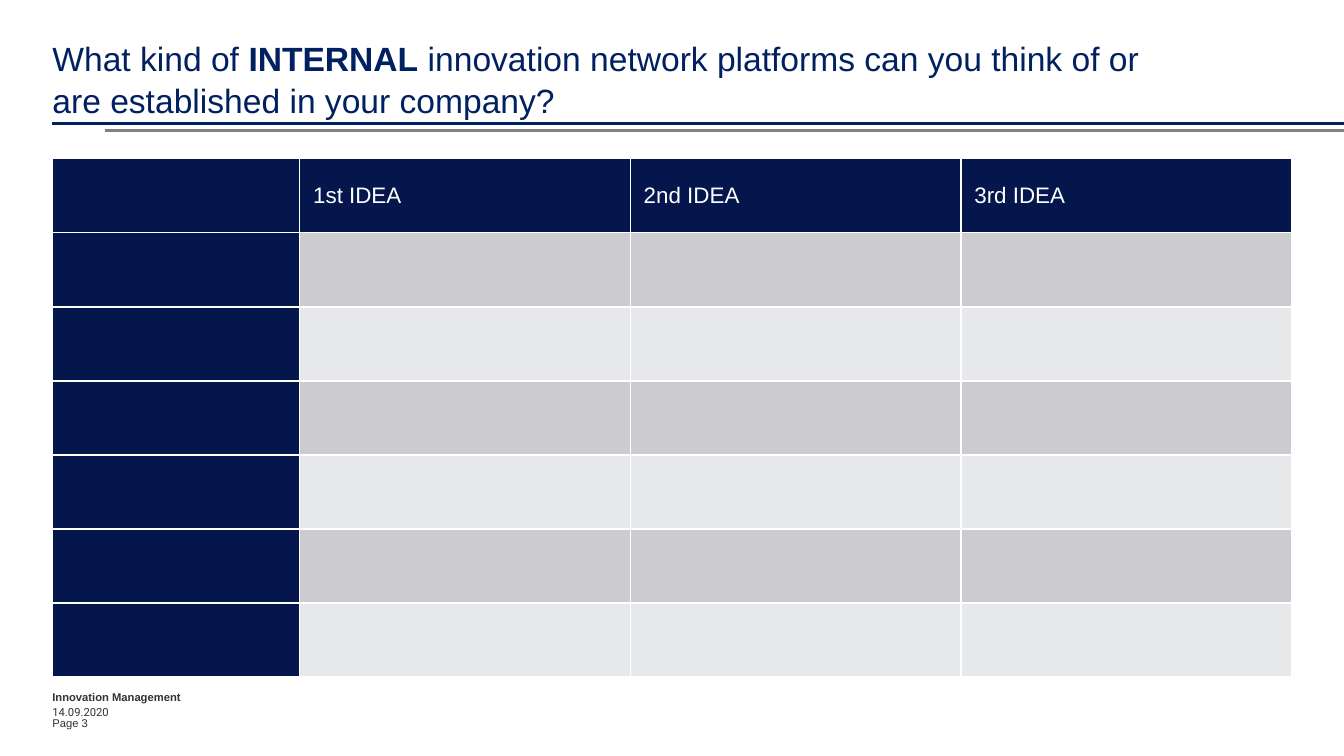
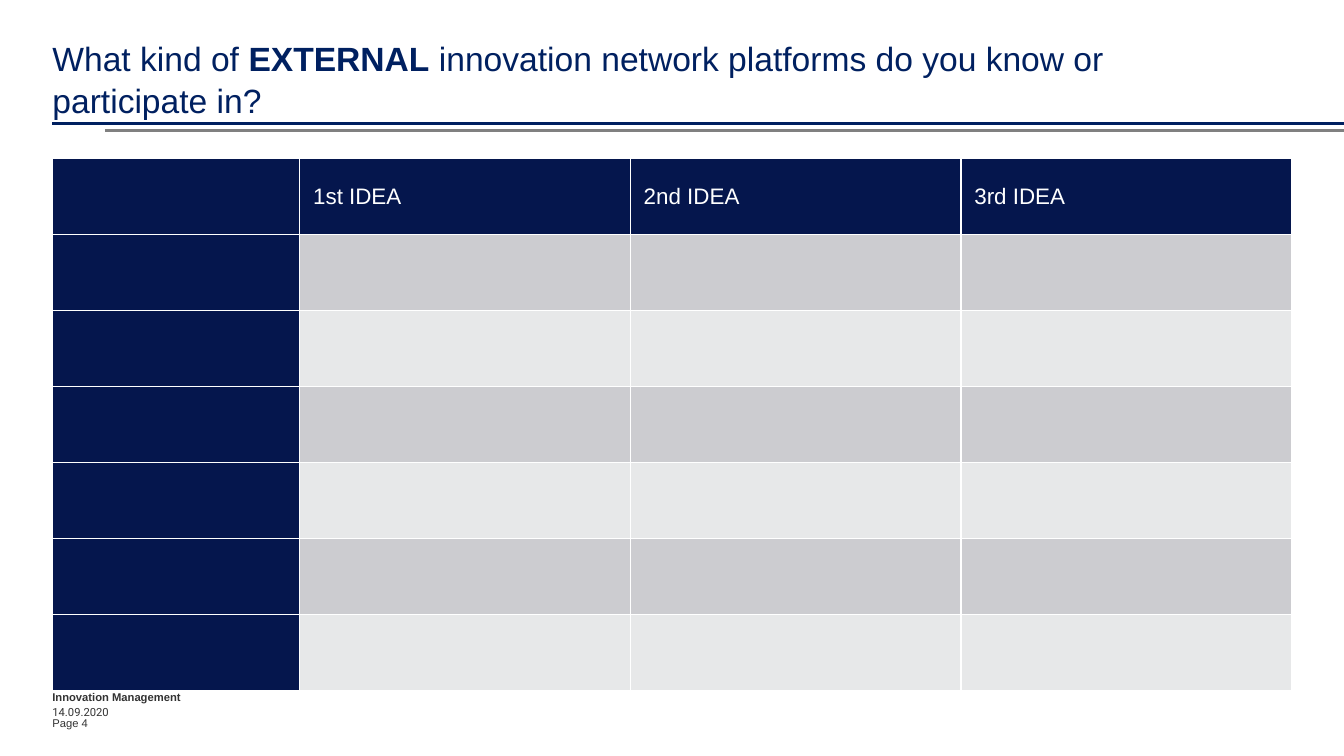
from dataclasses import dataclass

from lxml import etree
from pptx import Presentation
from pptx.dml.color import RGBColor
from pptx.enum.shapes import MSO_CONNECTOR
from pptx.enum.text import MSO_ANCHOR, MSO_AUTO_SIZE, PP_ALIGN
from pptx.oxml.ns import qn
from pptx.util import Inches, Pt

STRAIGHT = MSO_CONNECTOR.STRAIGHT
TOP, MIDDLE = MSO_ANCHOR.TOP, MSO_ANCHOR.MIDDLE
NO_FIT, GROW = MSO_AUTO_SIZE.NONE, MSO_AUTO_SIZE.SHAPE_TO_FIT_TEXT
LEFT = PP_ALIGN.LEFT

TITLE_BLUE, RULE_GREY, FOOTER_GREY = "002060", "808080", "333333"
NAVY, BAND_DARK, BAND_LIGHT, WHITE = "05164D", "CCCCD0", "E7E8E9", "FFFFFF"

SLIDE_W = 10
SLIDE_H = SLIDE_W * 9 / 16
MARGIN = 0.39
TABLE_TOP = 1.18
COLUMN_WIDTHS = (1.84, 2.46, 2.46, 2.46)
ROW_COUNT = 7
HEADINGS = ("", "1st IDEA", "2nd IDEA", "3rd IDEA")


@dataclass(frozen=True)
class Rule:
    left: float
    top: float
    color: str


@dataclass(frozen=True)
class FooterLine:
    top: float
    width: float
    text: str
    font: str = "Arial"
    bold: bool = False
    wrap: bool = False


@dataclass(frozen=True)
class IdeaSlide:
    page: int
    title: tuple[str, str, str]  # the middle part is bold
    table_height: float


RULES = (Rule(MARGIN, 0.92, TITLE_BLUE), Rule(2 * MARGIN, 0.97, RULE_GREY))
FOOTER = (
    FooterLine(5.25, 0.89, "14.09.2020", font="Roboto"),
    FooterLine(5.14, 1, "Innovation Management", bold=True),
)
SLIDES = (
    IdeaSlide(3, ("What kind of ", "INTERNAL",
                  " innovation network platforms can you think of or are "
                  "established in your company?"), 3.86),
    IdeaSlide(4, ("What kind of ", "EXTERNAL",
                  " innovation network platforms do you know or "
                  "participate in?"), 3.96),
)


def rgb(color: str) -> RGBColor:
    return RGBColor.from_string(color)


def add_run(p, text: str, size: float, color: str, font: str = "Arial",
            bold: bool = False) -> None:
    r = p.add_run()
    r.text = text
    r.font.size = Pt(size)
    r.font.name = font
    r.font.bold = bold
    r.font.color.rgb = rgb(color)


def prepare_frame(tf, anchor, fit, wrap: bool) -> None:
    """Remove the margins and set anchor, fitting and wrapping."""
    tf.margin_left = tf.margin_right = tf.margin_top = tf.margin_bottom = 0
    tf.vertical_anchor = anchor
    tf.auto_size = fit
    tf.word_wrap = wrap


def add_rule(slide, rule: Rule) -> None:
    y = Inches(rule.top)
    line = slide.shapes.add_connector(
        STRAIGHT, Inches(rule.left), y, Inches(SLIDE_W), y)
    line.line.color.rgb = rgb(rule.color)
    line.line.width = Pt(1.5)
    etree.SubElement(line._element.spPr, qn("a:effectLst"))


def set_title(slide, parts: tuple[str, str, str]) -> None:
    sp = slide.shapes.title
    sp.left, sp.top = Inches(MARGIN), Inches(0.28)
    sp.width, sp.height = Inches(8.11), Inches(0.59)
    prepare_frame(sp.text_frame, TOP, NO_FIT, True)
    p = sp.text_frame.paragraphs[0]
    p.alignment = LEFT
    p.line_spacing = Pt(22)
    for i, text in enumerate(parts):
        add_run(p, text, 18, TITLE_BLUE, bold=i == 1)


def add_footer_line(slide, line: FooterLine) -> None:
    sp = slide.shapes.add_textbox(
        Inches(MARGIN), Inches(line.top), Inches(line.width), Inches(0.1))
    prepare_frame(sp.text_frame, MIDDLE, GROW, line.wrap)
    add_run(sp.text_frame.paragraphs[0], line.text, 6, FOOTER_GREY,
            line.font, line.bold)


def set_borders(cell) -> None:
    """Draw 1 pt white borders on all sides."""
    props = cell._tc.get_or_add_tcPr()
    for side in "LRTB":
        ln = etree.SubElement(props, qn(f"a:ln{side}"), w=str(Pt(1)))
        fill = etree.SubElement(ln, qn("a:solidFill"))
        etree.SubElement(fill, qn("a:srgbClr"), val=WHITE)


def cell_color(row: int, column: int) -> str:
    if row == 0 or column == 0:
        return NAVY
    return BAND_DARK if row % 2 else BAND_LIGHT


def add_idea_table(slide, height: float) -> None:
    table = slide.shapes.add_table(
        ROW_COUNT, len(COLUMN_WIDTHS), Inches(MARGIN), Inches(TABLE_TOP),
        Inches(sum(COLUMN_WIDTHS)), Inches(height)).table
    for column, width in zip(table.columns, COLUMN_WIDTHS):
        column.width = Inches(width)
    for r, row in enumerate(table.rows):
        for c, cell in enumerate(row.cells):
            set_borders(cell)
            cell.fill.solid()
            cell.fill.fore_color.rgb = rgb(cell_color(r, c))
            cell.vertical_anchor = MIDDLE
    for cell, heading in zip(table.rows[0].cells, HEADINGS):
        if heading:
            add_run(cell.text_frame.paragraphs[0], heading, 12, WHITE)


def add_idea_slide(prs, content: IdeaSlide) -> None:
    slide = prs.slides.add_slide(prs.slide_layouts.get_by_name("Title Only"))
    slide.background.fill.solid()
    slide.background.fill.fore_color.rgb = rgb(WHITE)
    set_title(slide, content.title)
    for rule in RULES:
        add_rule(slide, rule)
    page = FooterLine(5.33, 0.53, f"Page {content.page}", wrap=True)
    for line in (page, *FOOTER):
        add_footer_line(slide, line)
    add_idea_table(slide, content.table_height)


def main() -> None:
    prs = Presentation()
    prs.slide_width, prs.slide_height = Inches(SLIDE_W), Inches(SLIDE_H)
    for content in SLIDES:
        add_idea_slide(prs, content)
    prs.save("out.pptx")


if __name__ == "__main__":
    main()
